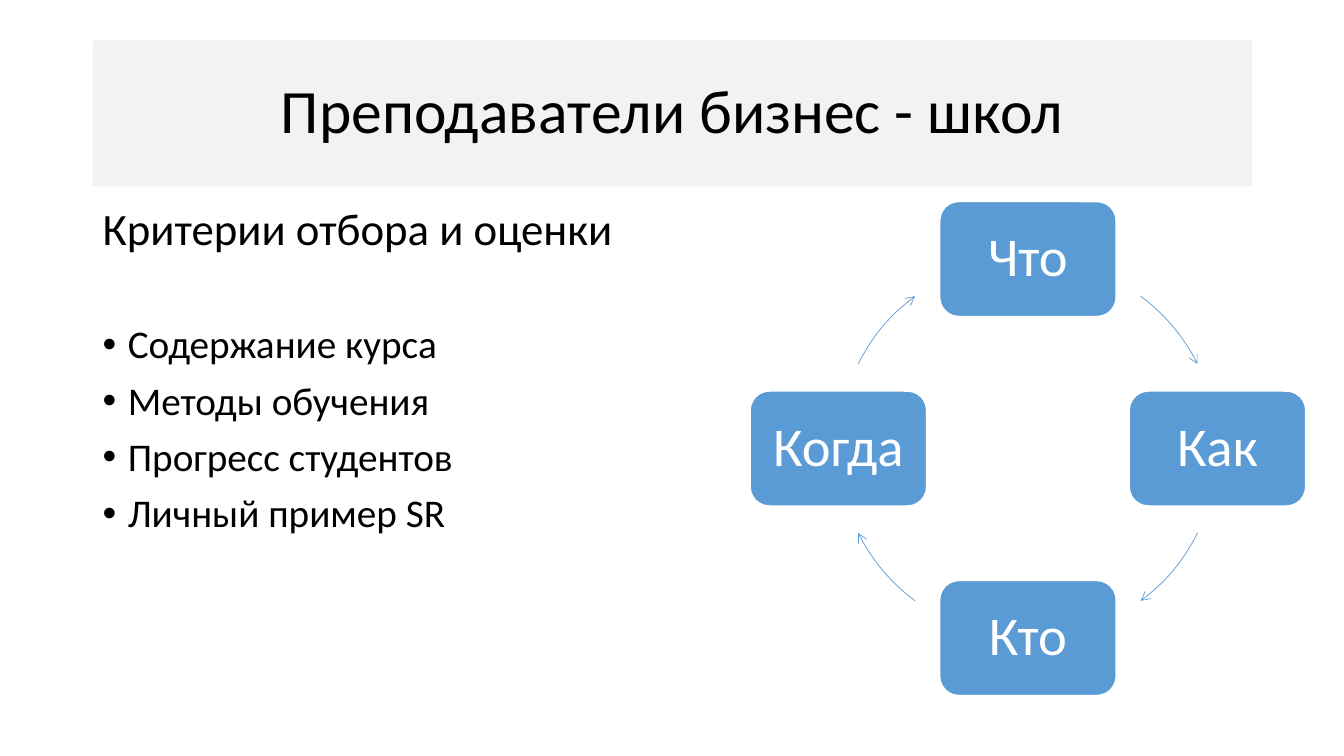
import pptx
import pptx.dml.color
import pptx.enum.shapes
import pptx.enum.text
import pptx.oxml.ns
import pptx.util
from lxml import etree

Inches = pptx.util.Inches
Pt = pptx.util.Pt
SHAPES = pptx.enum.shapes.MSO_SHAPE
ALIGN = pptx.enum.text.PP_ALIGN
ANCHOR = pptx.enum.text.MSO_ANCHOR

BLUE = "5B9BD5"
WHITE = "FFFFFF"
BLACK = "000000"
TITLE_FILL = "F2F2F2"
CRITERIA = ["Содержание курса", "Методы обучения", "Прогресс студентов", "Личный пример SR"]
QUESTIONS = [("Что", 0, -1), ("Как", 1, 0), ("Кто", 0, 1), ("Когда", -1, 0)]
ARC_STARTS = [306.5, 26.5, 126.5, 206.5]
ARC_SWEEP = 27
ADJUSTMENT_PER_DEGREE = 0.6


def color(value):
    return pptx.dml.color.RGBColor.from_string(value)


def add_box(page, kind, left, top, width, height, fill=None):
    box = page.shapes.add_shape(kind, Inches(left), Inches(top), Inches(width), Inches(height))
    box.shadow.inherit = False
    box.line.fill.background()
    if fill:
        box.fill.solid()
        box.fill.fore_color.rgb = color(fill)
    else:
        box.fill.background()
    return box


def write(para, text, size, hue, align=ALIGN.CENTER):
    para.text = text
    para.alignment = align
    para.line_spacing = 0.9
    for span in para.runs:
        span.font.name = "Calibri"
        span.font.size = Pt(size)
        span.font.color.rgb = color(hue)


def add_bullet(para):
    properties = para._p.get_or_add_pPr()
    properties.set("marL", str(Inches(0.25)))
    properties.set("indent", str(-Inches(0.25)))
    font = etree.SubElement(properties, pptx.oxml.ns.qn("a:buFont"))
    font.set("typeface", "Arial")
    bullet = etree.SubElement(properties, pptx.oxml.ns.qn("a:buChar"))
    bullet.set("char", "•")


def add_title(page, left, top, width, height):
    title = add_box(page, SHAPES.RECTANGLE, left, top, width, height, TITLE_FILL)
    title.text_frame.vertical_anchor = ANCHOR.MIDDLE
    write(title.text_frame.paragraphs[0], "Преподаватели бизнес - школ", 44, BLACK)


def add_criteria(page, left, top, width, height):
    box = page.shapes.add_textbox(Inches(left), Inches(top), Inches(width), Inches(height))
    frame = box.text_frame
    frame.word_wrap = True
    heading = frame.paragraphs[0]
    write(heading, "Критерии отбора и оценки", 32, BLACK, ALIGN.LEFT)
    heading.space_before = Pt(10)
    for index, criterion in enumerate(CRITERIA):
        para = frame.add_paragraph()
        write(para, criterion, 28, BLACK, ALIGN.LEFT)
        para.space_before = Pt(10 if index else 50)
        add_bullet(para)


def add_arc_arrow(page, left, top, size, start):
    arc = add_box(page, SHAPES.ARC, left, top, size, size)
    arc.adjustments[0] = start * ADJUSTMENT_PER_DEGREE
    arc.adjustments[1] = (start + ARC_SWEEP) * ADJUSTMENT_PER_DEGREE
    arc.line.color.rgb = color(BLUE)
    arc.line.width = Pt(0.5)
    head = etree.SubElement(arc.line._get_or_add_ln(), pptx.oxml.ns.qn("a:tailEnd"))
    head.set("type", "arrow")


def add_cycle(page, left, top, width, height):
    node_width, node_height = 1.75, 1.14
    radius = (height - node_height) / 2
    center_x, center_y = left + width / 2, top + height / 2
    for (question, across, down), start in zip(QUESTIONS, ARC_STARTS):
        node = add_box(page, SHAPES.ROUNDED_RECTANGLE,
                       center_x + across * radius - node_width / 2,
                       center_y + down * radius - node_height / 2,
                       node_width, node_height, BLUE)
        node.line.color.rgb = color(WHITE)
        node.line.width = Pt(1)
        node.text_frame.vertical_anchor = ANCHOR.MIDDLE
        write(node.text_frame.paragraphs[0], question, 39, WHITE)
        add_arc_arrow(page, center_x - radius, center_y - radius, radius * 2, start)


def main():
    deck = pptx.Presentation()
    deck.slide_width = Inches(13.33)
    deck.slide_height = Inches(7.5)
    page = deck.slides.add_slide(deck.slide_layouts[6])
    add_title(page, 0.92, 0.4, 11.5, 1.45)
    add_criteria(page, 0.92, 2, 11.5, 4.76)
    add_cycle(page, 7.44, 2, 5.51, 4.9)
    deck.save("out.pptx")


if __name__ == "__main__":
    main()
